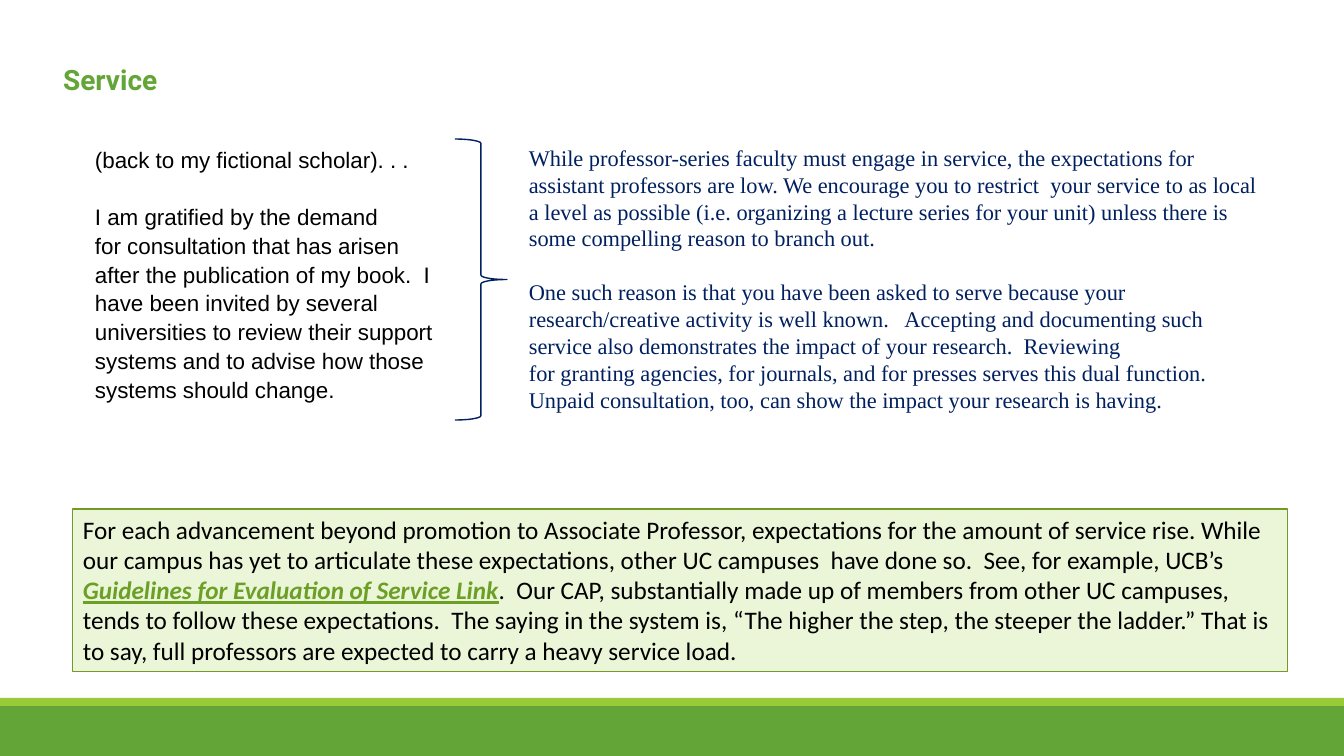
"""Build the slide on service expectations for faculty."""
from typing import Any, NamedTuple

from pptx import Presentation
from pptx.dml.color import RGBColor
from pptx.enum.shapes import MSO_SHAPE as SHAPE
from pptx.enum.text import MSO_ANCHOR as ANCHOR, PP_ALIGN as ALIGN
from pptx.util import Emu, Pt

EMU_PER_PX = 914400 / 100.8
COLORS = {
    "green": "63A537",
    "lime": "99CB38",
    "pale": "EBF5D7",
    "olive": "739A28",
    "link": "6B9F25",
    "navy": "002060",
    "black": "000000",
}


class Box(NamedTuple):
    x: int
    y: int
    w: int
    h: int


class Outline(NamedTuple):
    kind: Any
    box: Box
    fill: str | None = None
    line: str | None = None
    width: float = 0


class Run(NamedTuple):
    text: str
    color: str
    strong: bool = False


class Passage(NamedTuple):
    box: Box
    paragraphs: list[list[Run]]
    font: str
    size: int
    gaps: dict[int, float] = {}
    spacing: float = 1.0


BANDS = [
    Outline(SHAPE.RECTANGLE, Box(0, 706, 1344, 50), "green"),
    Outline(SHAPE.RECTANGLE, Box(0, 698, 1344, 8), "lime"),
]
BRACE = Outline(SHAPE.RIGHT_BRACE, Box(455, 139, 52, 281), None, "navy", 1)
PANEL = Outline(SHAPE.RECTANGLE, Box(73, 509, 1215, 163), "pale", "olive", 0.75)

TITLE = Passage(Box(53, 55, 672, 45), [[Run("Service", "green", True)]], "Roboto", 20, spacing=1.07)
SCHOLAR = Passage(
    Box(85, 139, 370, 305),
    [
        [Run("(back to my fictional scholar). . .", "black")],
        [Run("I am gratified by the demand", "black")],
        [Run("for consultation that has arisen after the publication of my book.  I have been "
             "invited by several universities to review their support systems and to advise how "
             "those systems should change.", "black")],
    ],
    "Arial", 16, {1: 20.5}, 1.07,
)
ADVICE = Passage(
    Box(519, 139, 756, 312),
    [
        [Run("While professor-series faculty must engage in service, the expectations for assistant "
             "professors are low. We encourage you to restrict  your service to as local a level as "
             "possible (i.e. organizing a lecture series for your unit) unless there is some "
             "compelling reason to branch out.", "navy")],
        [Run("One such reason is that you have been asked to serve because your research/creative "
             "activity is well known.   Accepting and documenting such service also demonstrates "
             "the impact of your research.  Reviewing", "navy")],
        [Run("for granting agencies, for journals, and for presses serves this dual function.  "
             "Unpaid consultation, too, can show the impact your research is having.", "navy")],
    ],
    "Times New Roman", 16, {1: 19.2},
)
EXPECTATIONS = Passage(
    PANEL.box,
    [
        [
            Run("For each advancement beyond promotion to Associate Professor, expectations for the "
                "amount of service rise. While our campus has yet to articulate these expectations, "
                "other UC campuses  have done so.  See, for example, UCB’s ", "black"),
            Run("Guidelines for Evaluation of Service Link", "link", True),
            Run(".  Our CAP, substantially made up of members from other UC campuses, tends to "
                "follow these expectations.  The saying in the system is, “The higher the step, "
                "the steeper the ladder.” That is", "black"),
        ],
        [Run("to say, full professors are expected to carry a heavy service load.", "black")],
    ],
    "Calibri", 18,
)


def px(n: int) -> Emu:
    """Turn pixels into EMU."""
    return Emu(round(n * EMU_PER_PX))


def rgb(name: str) -> RGBColor:
    """Look up a named colour."""
    return RGBColor.from_string(COLORS[name])


def place(box: Box) -> list[Emu]:
    """Give the left, top, width and height of a box in EMU."""
    return [px(n) for n in box]


def add_outline(shapes: Any, item: Outline) -> Any:
    """Draw a preset shape with its fill and line."""
    sp = shapes.add_shape(item.kind, *place(item.box))
    sp.shadow.inherit = False
    if item.fill:
        sp.fill.solid()
        sp.fill.fore_color.rgb = rgb(item.fill)
    else:
        sp.fill.background()
    if item.line:
        sp.line.color.rgb = rgb(item.line)
        sp.line.width = Pt(item.width)
    else:
        sp.line.fill.background()
    return sp


def add_run(p: Any, text: str, *, font: str, size: int, color: str,
            bold: bool = False, italic: bool = False, underline: bool = False) -> None:
    """Append formatted text to a paragraph."""
    r = p.add_run()
    r.text = text
    r.font.name = font
    r.font.size = Pt(size)
    r.font.color.rgb = rgb(color)
    r.font.bold = bold
    r.font.italic = italic
    r.font.underline = underline


def write(sp: Any, item: Passage) -> None:
    """Fill a shape with the paragraphs of a passage."""
    tf = sp.text_frame
    tf.word_wrap = True
    tf.vertical_anchor = ANCHOR.TOP
    for i, runs in enumerate(item.paragraphs):
        p = tf.add_paragraph() if i else tf.paragraphs[0]
        p.alignment = ALIGN.LEFT
        p.line_spacing = item.spacing
        p.space_before = Pt(item.gaps.get(i, 0))
        for run in runs:
            emphasis = run.strong and item is EXPECTATIONS
            add_run(p, run.text, font=item.font, size=item.size, color=run.color,
                    bold=run.strong, italic=emphasis, underline=emphasis)


def main() -> None:
    """Build and save the slide."""
    prs = Presentation()
    prs.slide_width, prs.slide_height = px(1344), px(756)
    s = prs.slides.add_slide(prs.slide_layouts[5])
    title = s.shapes.title
    title.left, title.top, title.width, title.height = place(TITLE.box)
    write(title, TITLE)
    for band in BANDS:
        add_outline(s.shapes, band)
    for passage in (SCHOLAR, ADVICE):
        write(s.shapes.add_textbox(*place(passage.box)), passage)
    write(add_outline(s.shapes, PANEL), EXPECTATIONS)
    add_outline(s.shapes, BRACE)
    prs.save("out.pptx")


if __name__ == "__main__":
    main()
